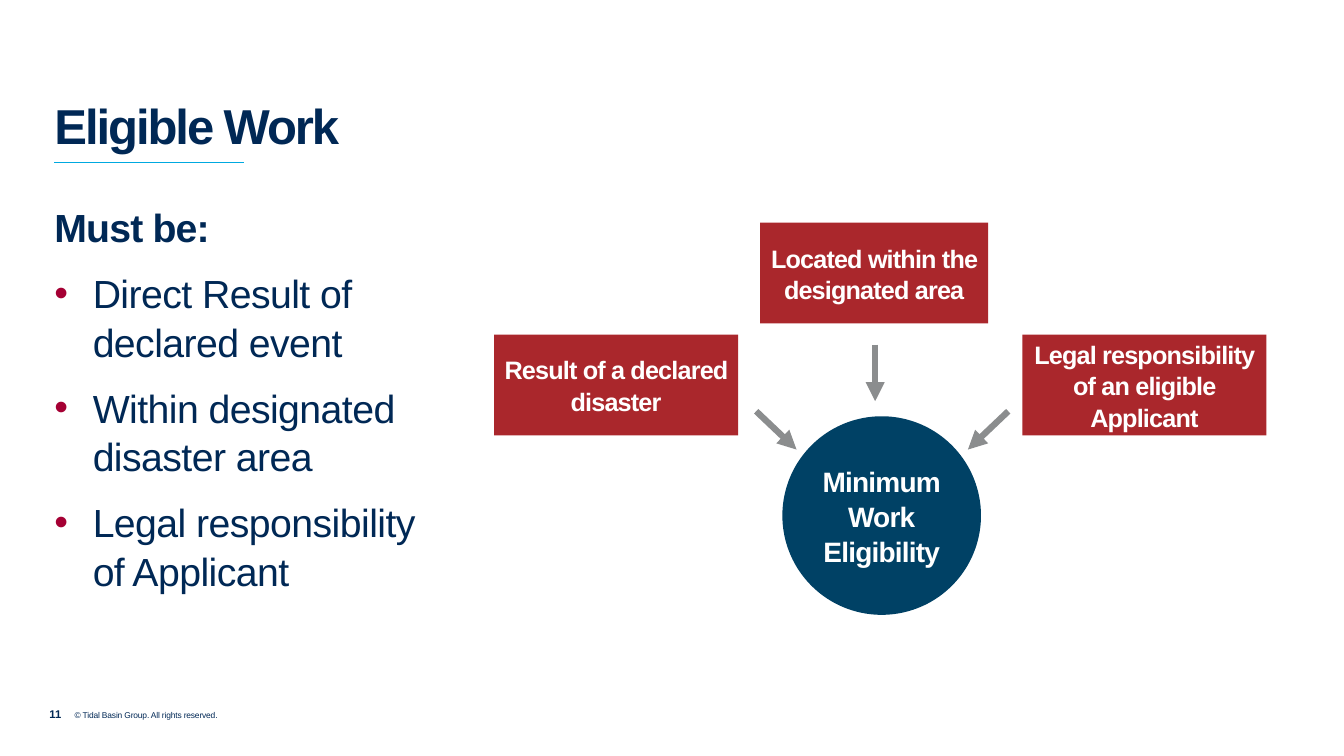
import pptx
import pptx.dml.color
import pptx.enum.shapes
import pptx.enum.text
import pptx.oxml.ns
import pptx.util
from lxml import etree

Inches, Pt = pptx.util.Inches, pptx.util.Pt
ALIGN, ANCHOR = pptx.enum.text.PP_ALIGN, pptx.enum.text.MSO_ANCHOR
SHAPE = pptx.enum.shapes.MSO_SHAPE
qn = pptx.oxml.ns.qn

# Content
TITLE = "Eligible Work"
LEAD = "Must be:"
CONDITIONS = [
    "Direct Result of declared event",
    "Within designated disaster area",
    "Legal responsibility \vof Applicant",
]
CRITERIA = [  # text, left, top, width
    ("Result of a declared disaster", 4.9, 3.32, 2.42),
    ("Located within the designated area", 7.54, 2.21, 2.26),
    ("Legal responsibility of an eligible Applicant", 10.14, 3.32, 2.42),
]
CRITERION_HEIGHT = 1
HUB = ["Minimum", "Work", "Eligibility"]
HUB_AREA = (7.76, 4.13, 1.97, 1.97)
ARROWS = [
    ((8.68, 3.42), (8.68, 3.98)),
    ((7.5, 4.08), (7.9, 4.46)),
    ((10, 4.08), (9.6, 4.46)),
]
PAGE_NUMBER = "11"
COPYRIGHT = "© Tidal Basin Group. All rights reserved."

NAVY, BLUE, RED = "002855", "004165", "AA272C"
BULLET_RED, GREY, CYAN, WHITE = "A50034", "8B8D8E", "00A9E0", "FFFFFF"


def color(hex_code):
    return pptx.dml.color.RGBColor.from_string(hex_code)


def place(shape, left, top, width, height):
    shape.left, shape.top = Inches(left), Inches(top)
    shape.width, shape.height = Inches(width), Inches(height)


def prepare(frame, anchor=ANCHOR.TOP, inset=0):
    frame.word_wrap = True
    frame.auto_size = pptx.enum.text.MSO_AUTO_SIZE.NONE
    frame.vertical_anchor = anchor
    frame.margin_left = frame.margin_right = Inches(inset)
    frame.margin_top = frame.margin_bottom = Inches(inset / 2)


def write(paragraph, text, size, hex_code=NAVY, bold=False, tracking=0,
          align=ALIGN.LEFT, after=0, spacing=1.04, bullet=False):
    paragraph.text = text
    paragraph.alignment = align
    paragraph.space_before, paragraph.space_after = Pt(0), Pt(after)
    paragraph.line_spacing = spacing
    properties = paragraph._p.get_or_add_pPr()
    indent = Inches(0.38) if bullet else 0
    properties.set("marL", str(indent))
    properties.set("indent", str(-indent))
    if bullet:
        paint = etree.SubElement(properties, qn("a:buClr"))
        etree.SubElement(paint, qn("a:srgbClr"), val=BULLET_RED)
        etree.SubElement(properties, qn("a:buFont"), typeface="Arial")
        etree.SubElement(properties, qn("a:buChar"), char="•")
    else:
        etree.SubElement(properties, qn("a:buNone"))
    for run in paragraph.runs:
        run.font.name, run.font.size, run.font.bold = "Arial", Pt(size), bold
        run.font.color.rgb = color(hex_code)
        run._r.get_or_add_rPr().set("spc", str(round(tracking * 100)))


def add_line(slide, start, end, hex_code, width, arrow=False):
    line = slide.shapes.add_connector(
        pptx.enum.shapes.MSO_CONNECTOR.STRAIGHT,
        *[Inches(value) for value in start + end])
    line.line.color.rgb = color(hex_code)
    line.line.width = Pt(width)
    if arrow:
        etree.SubElement(line.line._get_or_add_ln(), qn("a:tailEnd"), type="triangle")
    etree.SubElement(line._element.spPr, qn("a:effectLst"))


def add_block(slide, kind, area, fill, lines, size):
    block = slide.shapes.add_shape(kind, *[Inches(value) for value in area])
    block.shadow.inherit = False
    block.fill.solid()
    block.fill.fore_color.rgb = color(fill)
    block.line.fill.background()
    frame = block.text_frame
    prepare(frame, ANCHOR.MIDDLE, 0.1)
    for index, text in enumerate(lines):
        paragraph = frame.add_paragraph() if index else frame.paragraphs[0]
        write(paragraph, text, size, WHITE, True, -0.6, ALIGN.CENTER)


def add_note(slide, area, text, size, **style):
    note = slide.shapes.add_textbox(*[Inches(value) for value in area])
    prepare(note.text_frame)
    write(note.text_frame.paragraphs[0], text, size, spacing=1, **style)


def main():
    deck = pptx.Presentation()
    deck.slide_width, deck.slide_height = Inches(13.33), Inches(7.5)
    slide = deck.slides.add_slide(deck.slide_layouts[1])

    # Title with rule
    title, requirements = slide.shapes.title, slide.placeholders[1]
    place(title, 0.54, 0.92, 10.3, 0.61)
    prepare(title.text_frame)
    write(title.text_frame.paragraphs[0], TITLE, 35, bold=True, tracking=-1.5)
    add_line(slide, (0.54, 1.61), (2.42, 1.61), CYAN, 0.75)

    # Requirements list
    place(requirements, 0.54, 2, 4.36, 2.91)
    frame = requirements.text_frame
    prepare(frame)
    write(frame.paragraphs[0], LEAD, 28, bold=True, tracking=-0.6, after=12)
    for condition in CONDITIONS:
        paragraph = frame.add_paragraph()
        paragraph.level = 1
        write(paragraph, condition, 28, tracking=-0.4, after=12, bullet=True)

    # Diagram: three criteria pointing at the hub
    add_block(slide, SHAPE.OVAL, HUB_AREA, BLUE, HUB, 20)
    for start, end in ARROWS:
        add_line(slide, start, end, GREY, 4.5, arrow=True)
    for text, left, top, width in CRITERIA:
        add_block(slide, SHAPE.RECTANGLE, (left, top, width, CRITERION_HEIGHT),
                  RED, [text], 18)

    # Footer
    add_note(slide, (0.49, 7.02, 0.25, 0.3), PAGE_NUMBER, 8, bold=True)
    add_note(slide, (0.74, 7.04, 2.78, 0.45), COPYRIGHT, 6, tracking=-0.1)

    deck.save("out.pptx")


if __name__ == "__main__":
    main()
